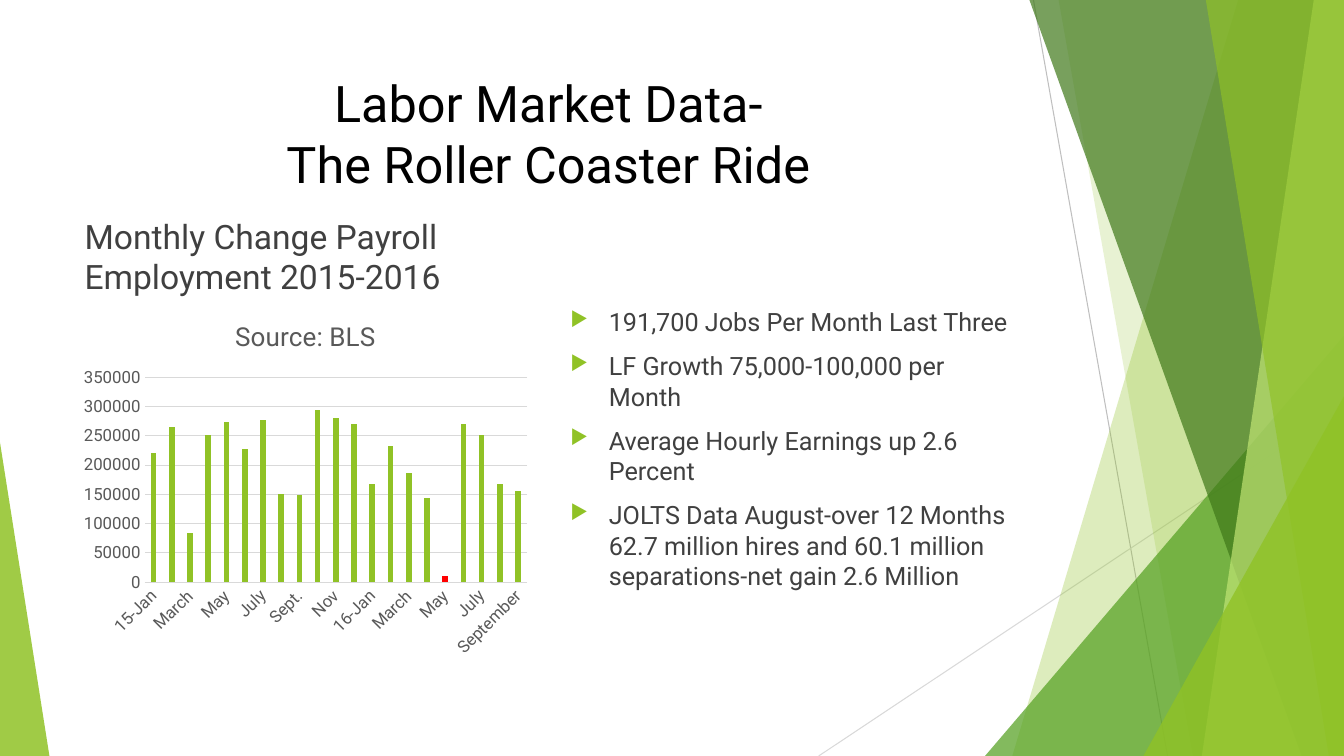
from dataclasses import dataclass

import lxml.etree
import pptx
import pptx.chart.data
import pptx.dml.color
import pptx.enum.chart
import pptx.enum.shapes
import pptx.enum.text
import pptx.oxml.ns
import pptx.util

Inches = pptx.util.Inches
Pt = pptx.util.Pt
qn = pptx.oxml.ns.qn

FONT = "Roboto"
COLORS = {
    "black": "000000",
    "text": "404040",
    "chart_text": "595959",
    "grid": "D9D9D9",
    "dark_line": "BFBFBF",
    "lime": "90C226",
    "green": "54A021",
    "forest": "3F7819",
    "pale": "C0E474",
    "red": "FF0000",
}
SLIDE_WIDTH, SLIDE_HEIGHT = 13.33, 7.5
COLUMN_LEFTS = (0.74, 5.56)
COLUMN_WIDTH = 4.58
CONTENT_TOP, CONTENT_HEIGHT = 2.99, 3.61


@dataclass
class Line:
    start: tuple[float, float]
    end: tuple[float, float]
    color: str


@dataclass
class Band:
    """A strip with a slanted left side that reaches the right slide edge."""
    top_left: float
    bottom_left: float
    color: str
    opacity: int


@dataclass
class Triangle:
    left: float
    top: float
    width: float
    apex: float
    color: str
    opacity: int


LINES = [
    Line((10.25, 0), (11.58, 7.5), "dark_line"),
    Line((13.33, 4.03), (8.12, 7.5), "grid"),
]
FACETS = [
    Band(12.28, 10.04, "lime", 30),
    Band(10.5, 11.83, "lime", 20),
    Triangle(9.77, 3.33, 3.56, 1, "green", 72),
    Band(10.21, 12.91, "forest", 70),
    Band(13.03, 11.92, "pale", 70),
    Band(11.96, 13.18, "lime", 65),
    Triangle(11.34, 3.93, 1.99, 1, "lime", 80),
    Triangle(0, 4.39, 0.49, 0, "lime", 85),
]
TITLE_LINES = ["Labor Market Data-", "The Roller Coaster Ride"]
CHART_HEADING = "Monthly Change Payroll Employment 2015-2016"
BULLETS = [
    "191,700 Jobs Per Month Last Three",
    "LF Growth 75,000-100,000 per Month",
    "Average Hourly Earnings up 2.6 Percent",
    "JOLTS Data August-over 12 Months 62.7 million hires and 60.1 million "
    "separations-net gain 2.6 Million",
]
PAYROLL_CHANGES = [
    ("15-Jan", 221000), ("Feb", 265000), ("March", 84000), ("April", 251000),
    ("May", 273000), ("June", 228000), ("July", 277000), ("Aug", 150000),
    ("Sept.", 149000), ("Oct.", 295000), ("Nov", 280000), ("Dec", 271000),
    ("16-Jan", 168000), ("Feb", 233000), ("March", 186000), ("April", 144000),
    ("May", 11000), ("June", 271000), ("July", 252000), ("August", 167000),
    ("September", 156000),
]
WEAKEST_MONTH = 16


def rgb(name: str) -> pptx.dml.color.RGBColor:
    return pptx.dml.color.RGBColor.from_string(COLORS[name])


def style_font(font, size: float, color: str) -> None:
    font.name = FONT
    font.size = Pt(size)
    font.bold = False
    font.color.rgb = rgb(color)


def add_run(paragraph, text: str, size: float, color: str) -> None:
    run = paragraph.add_run()
    run.text = text
    style_font(run.font, size, color)


def draw_line(slide, line: Line) -> None:
    connector = slide.shapes.add_connector(
        pptx.enum.shapes.MSO_CONNECTOR.STRAIGHT,
        *(Inches(value) for value in line.start + line.end))
    connector.line.color.rgb = rgb(line.color)
    connector.line.width = Pt(0.75)
    lxml.etree.SubElement(connector._element.spPr, qn("a:effectLst"))


def draw_facet(slide, facet: Band | Triangle) -> None:
    if isinstance(facet, Band):
        builder = slide.shapes.build_freeform(Inches(facet.top_left), 0)
        corners = [(SLIDE_WIDTH, 0), (SLIDE_WIDTH, SLIDE_HEIGHT),
                   (facet.bottom_left, SLIDE_HEIGHT)]
        builder.add_line_segments([(Inches(x), Inches(y)) for x, y in corners])
        shape = builder.convert_to_shape()
    else:
        shape = slide.shapes.add_shape(
            pptx.enum.shapes.MSO_SHAPE.ISOSCELES_TRIANGLE,
            Inches(facet.left), Inches(facet.top),
            Inches(facet.width), Inches(SLIDE_HEIGHT - facet.top))
        shape.adjustments[0] = facet.apex
    shape.shadow.inherit = False
    shape.line.fill.background()
    shape.fill.solid()
    shape.fill.fore_color.rgb = rgb(facet.color)
    color_element = shape._element.spPr.find(qn("a:solidFill"))[0]
    lxml.etree.SubElement(color_element, qn("a:alpha"), val=str(facet.opacity * 1000))


def draw_title(slide) -> None:
    title = slide.shapes.title
    title.left, title.top = Inches(COLUMN_LEFTS[0]), Inches(0.67)
    title.width, title.height = Inches(9.4), Inches(1.44)
    title.text_frame.word_wrap = True
    title.text_frame.vertical_anchor = pptx.enum.text.MSO_ANCHOR.TOP
    paragraph = title.text_frame.paragraphs[0]
    paragraph.alignment = pptx.enum.text.PP_ALIGN.CENTER
    for index, text in enumerate(TITLE_LINES):
        if index:
            paragraph.add_line_break()
        add_run(paragraph, text, 36, "black")


def add_bullet(paragraph) -> None:
    properties = paragraph._p.get_or_add_pPr()
    properties.set("marL", str(Inches(0.38)))
    properties.set("indent", str(Inches(-0.38)))
    bullet_color = lxml.etree.SubElement(properties, qn("a:buClr"))
    lxml.etree.SubElement(bullet_color, qn("a:srgbClr"), val=COLORS["lime"])
    lxml.etree.SubElement(properties, qn("a:buSzPct"), val="80000")
    lxml.etree.SubElement(properties, qn("a:buChar"), char="▶")


def draw_text(slide, left: float, top: float, height: float, texts: list[str],
              size: float, anchor, bulleted: bool) -> None:
    box = slide.shapes.add_textbox(
        Inches(left), Inches(top), Inches(COLUMN_WIDTH), Inches(height))
    box.text_frame.word_wrap = True
    box.text_frame.vertical_anchor = anchor
    for index, text in enumerate(texts):
        paragraph = box.text_frame.add_paragraph() if index else box.text_frame.paragraphs[0]
        paragraph.space_before = Pt(10)
        if bulleted:
            add_bullet(paragraph)
        add_run(paragraph, text, size, "text")


def draw_chart(slide) -> None:
    data = pptx.chart.data.CategoryChartData()
    data.categories = [month for month, _ in PAYROLL_CHANGES]
    data.add_series("Source: BLS", [change for _, change in PAYROLL_CHANGES])
    chart = slide.shapes.add_chart(
        pptx.enum.chart.XL_CHART_TYPE.COLUMN_CLUSTERED,
        Inches(COLUMN_LEFTS[0]), Inches(CONTENT_TOP),
        Inches(COLUMN_WIDTH), Inches(CONTENT_HEIGHT), data).chart
    style_font(chart.font, 10, "black")
    chart.has_legend = False
    chart.has_title = True
    add_run(chart.chart_title.text_frame.paragraphs[0], "Source: BLS", 18.6, "chart_text")
    chart.chart_title.include_in_layout = False

    # Columns, with the weakest month highlighted
    plot = chart.plots[0]
    plot.gap_width, plot.overlap, plot.vary_by_categories = 219, -27, False
    series = plot.series[0]
    series.invert_if_negative = False
    for part, color in ((series, "lime"), (series.points[WEAKEST_MONTH], "red")):
        part.format.fill.solid()
        part.format.fill.fore_color.rgb = rgb(color)

    # Axes and gridlines
    for axis in (chart.category_axis, chart.value_axis):
        axis.major_tick_mark = axis.minor_tick_mark = pptx.enum.chart.XL_TICK_MARK.NONE
        style_font(axis.tick_labels.font, 12, "chart_text")
    chart.value_axis.format.line.fill.background()
    chart.value_axis.has_major_gridlines = True
    for line in (chart.category_axis.format.line, chart.value_axis.major_gridlines.format.line):
        line.color.rgb = rgb("grid")
        line.width = Pt(0.75)


def main() -> None:
    presentation = pptx.Presentation()
    presentation.slide_width = Inches(SLIDE_WIDTH)
    presentation.slide_height = Inches(SLIDE_HEIGHT)
    slide = presentation.slides.add_slide(presentation.slide_layouts[5])

    # Background decoration
    for line in LINES:
        draw_line(slide, line)
    for facet in FACETS:
        draw_facet(slide, facet)

    # Title, chart column and bullet column
    draw_title(slide)
    draw_text(slide, COLUMN_LEFTS[0], 2.36, 0.63, [CHART_HEADING], 24,
              pptx.enum.text.MSO_ANCHOR.BOTTOM, bulleted=False)
    draw_chart(slide)
    draw_text(slide, COLUMN_LEFTS[1], CONTENT_TOP, CONTENT_HEIGHT, BULLETS, 18,
              pptx.enum.text.MSO_ANCHOR.TOP, bulleted=True)
    presentation.save("out.pptx")


if __name__ == "__main__":
    main()
